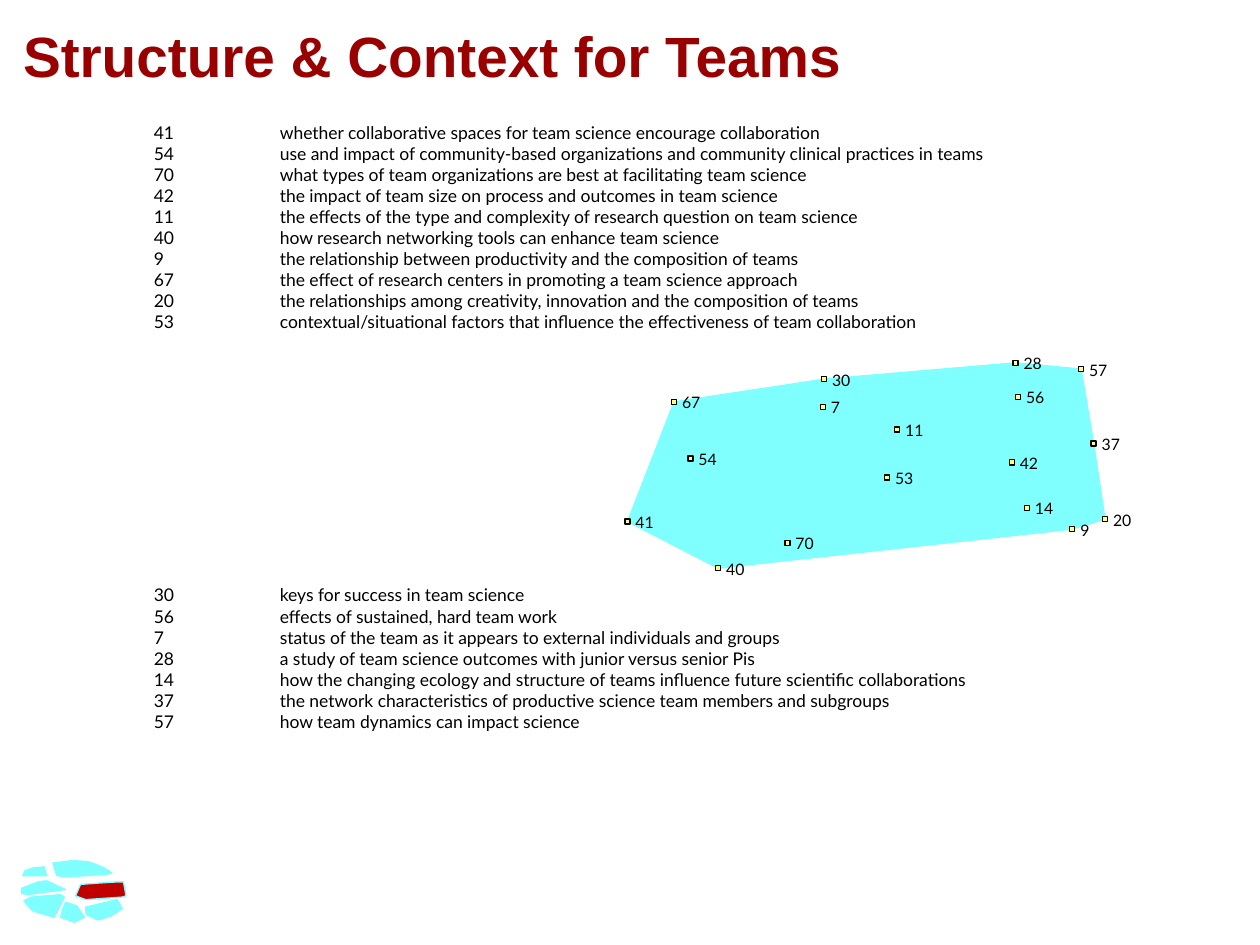
from lxml import etree
from pptx import Presentation
from pptx.dml.color import RGBColor
from pptx.enum.shapes import MSO_SHAPE
from pptx.enum.text import MSO_ANCHOR, MSO_AUTO_SIZE
from pptx.oxml.ns import qn
from pptx.util import Inches, Pt

RECT = MSO_SHAPE.RECTANGLE
MIDDLE = MSO_ANCHOR.MIDDLE
GROW = MSO_AUTO_SIZE.SHAPE_TO_FIT_TEXT
CELL = Inches(0.01)  # the slide is a grid of 1000 columns by 750 rows

COLORS = {"title": "990000", "text": "000000", "area": "80FFFF",
          "dot": "FFFF80", "focus": "C00000"}

TOP = [
    (41, "whether collaborative spaces for team science encourage collaboration"),
    (54, "use and impact of community-based organizations and community clinical practices in teams"),
    (70, "what types of team organizations are best at facilitating team science"),
    (42, "the impact of team size on process and outcomes in team science"),
    (11, "the effects of the type and complexity of research question on team science"),
    (40, "how research networking tools can enhance team science"),
    (9, "the relationship between productivity and the composition of teams"),
    (67, "the effect of research centers in promoting a team science approach"),
    (20, "the relationships among creativity, innovation and the composition of teams"),
    (53, "contextual/situational factors that influence the effectiveness of team collaboration"),
]
LOW = [
    (30, "keys for success in team science"),
    (56, "effects of sustained, hard team work"),
    (7, "status of the team as it appears to external individuals and groups"),
    (28, "a study of team science outcomes with junior versus senior Pis"),
    (14, "how the changing ecology and structure of teams influence future scientific collaborations"),
    (37, "the network characteristics of productive science team members and subgroups"),
    (57, "how team dynamics can impact science"),
]

# Centre of each statement's dot, in grid cells
DOTS = {
    7: (653, 323), 9: (851, 420), 11: (712, 341), 14: (815, 403),
    20: (877, 412), 28: (806, 288), 30: (654, 301), 37: (868, 352),
    40: (570, 451), 41: (498, 414), 42: (803, 367), 53: (704, 379),
    54: (548, 364), 56: (808, 315), 57: (858, 293), 67: (535, 319),
    70: (625, 431),
}
HULL = [41, 40, 9, 20, 37, 57, 28, 30, 67]

# Regions of the small overview map; the last one is this slide's topic
MAP = [
    [(48, 728), (59, 732), (67, 728), (61, 719), (52, 716), (50, 721)],
    [(68, 724), (69, 726), (77, 730), (79, 730), (88, 727), (93, 724),
     (97, 721), (93, 714), (68, 720)],
    [(18, 695), (37, 695), (35, 688), (26, 689), (20, 691)],
    [(19, 715), (24, 721), (26, 723), (43, 728), (51, 712), (48, 710), (25, 712)],
    [(17, 705), (17, 709), (22, 710), (52, 706), (37, 699), (30, 700)],
    [(42, 685), (45, 695), (53, 696), (84, 694), (89, 693), (83, 689),
     (76, 686), (70, 684), (58, 683)],
    [(60, 711), (68, 714), (97, 712), (100, 711), (99, 705), (98, 700),
     (93, 700), (77, 701), (64, 702)],
]


def rgb(name):
    return RGBColor.from_string(COLORS[name])


def cells(*nums):
    return [int(n * CELL) for n in nums]


def paint(shape, fill, line):
    shape.shadow.inherit = False
    shape.fill.solid()
    shape.fill.fore_color.rgb = rgb(fill)
    shape.line.color.rgb = rgb(line)
    shape.line.width = Pt(0)


def area(shapes, points, fill="area"):
    pen = shapes.build_freeform(*points[0], scale=CELL)
    pen.add_line_segments(points[1:], close=True)
    paint(pen.convert_to_shape(), fill, "area")


def style(para, face, size, color="text", bold=False):
    font = para.font
    font.name, font.size, font.bold = face, Pt(size), bold
    font.color.rgb = rgb(color)


def box(shapes, *place):
    frame = shapes.add_textbox(*cells(*place)).text_frame
    frame.word_wrap = True
    return frame


def hang(para):
    """Hanging indent, a right tab ahead of it and one-inch stops after."""
    props = para._p.get_or_add_pPr()
    props.set("marL", str(Inches(0.37)))
    props.set("indent", str(-Inches(0.37)))
    props.set("defTabSz", str(Inches(1)))
    tabs = etree.Element(qn("a:tabLst"))
    etree.SubElement(tabs, qn("a:tab"), pos=str(Inches(0.25)), algn="r")
    props.find(qn("a:defRPr")).addprevious(tabs)


def items(shapes):
    frame = box(shapes, 75.3, 92, 800, 532)
    frame.auto_size = GROW
    for i, (num, text) in enumerate(TOP + LOW):
        para = frame.add_paragraph() if i else frame.paragraphs[0]
        para.text = f"\t{num}\t{text}"
        style(para, "Lato", 10)
        hang(para)
        if i == len(TOP):
            para.space_before = Pt(144)  # room for the cluster: 12 lines


def dot(shapes, num, x, y):
    mark = shapes.add_shape(RECT, *cells(x - 2, y - 2, 4, 4))
    paint(mark, "dot", "text")
    frame = box(shapes, x + 3.2, y - 7, 16 if num < 10 else 23, 17)
    frame.margin_left = frame.margin_right = 0
    frame.margin_top = frame.margin_bottom = 0
    frame.word_wrap = False
    frame.auto_size = GROW
    para = frame.paragraphs[0]
    para.text = f" {num}"
    style(para, "Lato", 9)


def main():
    deck = Presentation()
    deck.slide_width, deck.slide_height = cells(1000, 750)
    shapes = deck.slides.add_slide(deck.slide_layouts[6]).shapes

    # Title
    head = box(shapes, 8.5, 8.5, 983, 70)
    head.vertical_anchor = MIDDLE
    head.paragraphs[0].text = "Structure & Context for Teams"
    style(head.paragraphs[0], "Arial", 32.4, "title", True)

    # Numbered statements
    items(shapes)

    # Cluster: its outline joins the outer dots
    area(shapes, [DOTS[num] for num in HULL])
    for num, (x, y) in DOTS.items():
        dot(shapes, num, x, y)

    # Overview map
    group = shapes.add_group_shape().shapes
    for points in MAP:
        area(group, points, "focus" if points is MAP[-1] else "area")

    deck.save("out.pptx")


if __name__ == "__main__":
    main()
